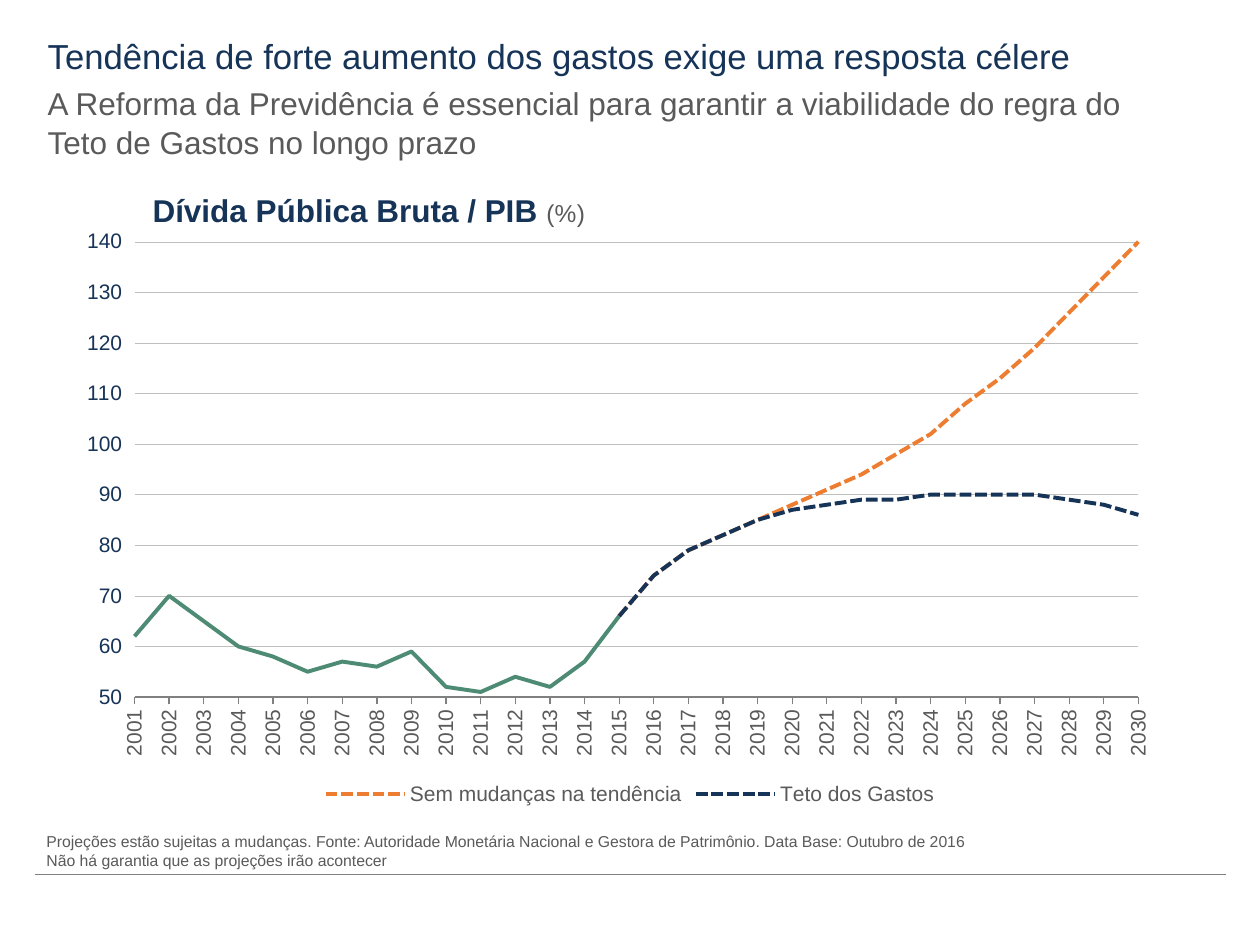
from lxml import etree
from pptx import Presentation
from pptx import util as u
from pptx.chart.data import CategoryChartData
from pptx.dml.color import RGBColor
from pptx.enum import chart as ch, dml, shapes, text
from pptx.oxml import parse_xml
from pptx.oxml.ns import nsdecls, qn

COLORS = {"navy": "163358", "gray": "5A5A5A", "rule": "808080", "grid": "BFBFBF",
          "green": "4D8B74", "orange": "ED7D31"}
FONT = "Arial"

YEARS = range(2001, 2031)
HISTORY = [62, 70, 65, 60, 58, 55, 57, 56, 59, 52, 51, 54, 52, 57, 66]
UNCHANGED = [66, 74, 79, 82, 85, 88, 91, 94, 98, 102, 108, 113, 119, 126, 133, 140]
CAPPED = [66, 74, 79, 82, 85, 87, 88, 89, 89, 90, 90, 90, 90, 89, 88, 86]


def rgb(name):
    return RGBColor.from_string(COLORS[name])


def place(parent, index, **fractions):
    """Give a chart part a manual layout, in fractions of the chart area."""
    for old in parent.findall(qn("c:layout")):
        parent.remove(old)
    layout = parse_xml(f"<c:layout {nsdecls('c')}><c:manualLayout/></c:layout>")
    manual = layout[0]
    if "w" in fractions:
        etree.SubElement(manual, qn("c:layoutTarget")).set("val", "inner")
    for axis in "xy":
        etree.SubElement(manual, qn(f"c:{axis}Mode")).set("val", "edge")
    for key, value in fractions.items():
        etree.SubElement(manual, qn(f"c:{key}")).set("val", str(value))
    parent.insert(index, layout)


class SlideBuilder:
    """Holds the deck's style and the slide being filled."""

    def __init__(self, deck):
        self.slide = deck.slides.add_slide(deck.slide_layouts[6])

    def style(self, font, size, color, bold=False):
        font.name, font.size, font.bold = FONT, u.Pt(size), bold
        font.color.rgb = rgb(color)

    def text(self, box, lines, size, color, spacing=None, wrap=True):
        frame = self.slide.shapes.add_textbox(*map(u.Inches, box)).text_frame
        frame.word_wrap = wrap
        frame.vertical_anchor = text.MSO_ANCHOR.TOP
        frame.text = "\n".join(lines)
        for paragraph in frame.paragraphs:
            paragraph.line_spacing = spacing
            for run in paragraph.runs:
                self.style(run.font, size, color)

    def rule(self, left, right, top):
        line = self.slide.shapes.add_connector(
            shapes.MSO_CONNECTOR.STRAIGHT, *map(u.Inches, (left, top, right, top)))
        line.line.color.rgb = rgb("rule")
        line.line.width = u.Pt(0.75)
        etree.SubElement(line.element.spPr, qn("a:effectLst"))

    def line_chart(self, box, categories, series):
        """Draw series given as (name, values, color, dash)."""
        data = CategoryChartData(number_format="0")
        data.categories = [str(category) for category in categories]
        for name, values, _, _ in series:
            data.add_series(name, values)
        chart = self.slide.shapes.add_chart(
            ch.XL_CHART_TYPE.LINE, *map(u.Inches, box), data).chart
        self.style(chart.font, 14, "gray")
        plot = chart.plots[0]
        plot.vary_by_categories = False
        for line, (_, _, color, dash) in zip(plot.series, series):
            line.smooth = False
            line.marker.style = ch.XL_MARKER_STYLE.NONE
            line.format.line.color.rgb = rgb(color)
            line.format.line.width = u.Pt(2.25)
            line.format.line.dash_style = dash
        place(chart.element.xpath(".//c:plotArea")[0], 0,
              x=0.047, y=0.105, w=0.918, h=0.717)
        return chart

    def chart_title(self, chart, parts, x, y):
        """Write the title from (text, size, color, bold) parts."""
        title = chart.chart_title
        paragraph = title.text_frame.paragraphs[0]
        for words, *look in parts:
            run = paragraph.add_run()
            run.text = words
            self.style(run.font, *look)
        place(title.element if hasattr(title, "element")
              else chart.element.xpath("./c:chart/c:title")[0], 1, x=x, y=y)

    def axes(self, chart, low, high, step):
        years, share = chart.category_axis, chart.value_axis
        years.tick_label_position = ch.XL_TICK_LABEL_POSITION.LOW
        years.major_tick_mark = ch.XL_TICK_MARK.OUTSIDE
        years.format.line.color.rgb = rgb("rule")
        self.style(years.tick_labels.font, 12, "gray")
        turned = chart.element.xpath(".//c:catAx/c:txPr/a:bodyPr")[0]
        turned.set("rot", "-5400000")
        turned.set("vert", "horz")

        share.minimum_scale, share.maximum_scale, share.major_unit = low, high, step
        share.major_tick_mark = ch.XL_TICK_MARK.OUTSIDE
        share.format.line.fill.background()
        share.major_gridlines.format.line.color.rgb = rgb("grid")
        share.major_gridlines.format.line.width = u.Pt(0.25)
        share.tick_labels.number_format = "0"
        share.tick_labels.number_format_is_linked = False
        self.style(share.tick_labels.font, 12, "navy")
        for crossing in chart.element.xpath(".//c:valAx/c:crossBetween"):
            crossing.getparent().remove(crossing)
        crossing = parse_xml(f'<c:crossBetween {nsdecls("c")} val="midCat"/>')
        chart.element.xpath(".//c:valAx/c:crosses")[0].addnext(crossing)

    def legend(self, chart, hidden):
        chart.has_legend = True
        chart.legend.position = ch.XL_LEGEND_POSITION.BOTTOM
        chart.legend.include_in_layout = False
        self.style(chart.legend.font, 12, "gray")
        entry = parse_xml(f'<c:legendEntry {nsdecls("c")}><c:idx val="{hidden}"/>'
                          '<c:delete val="1"/></c:legendEntry>')
        chart.element.xpath(".//c:legend/c:legendPos")[0].addnext(entry)


def main():
    deck = Presentation()
    deck.slide_width, deck.slide_height = u.Inches(10), u.Inches(7.5)
    page = SlideBuilder(deck)

    page.rule(0.28, 9.73, 6.94)
    page.text((0.28, 0.14, 8.72, 0.46),
              ["Tendência de forte aumento dos gastos exige uma resposta célere"],
              19.8, "navy", spacing=u.Pt(30))
    page.text((0.28, 0.6, 8.72, 0.39),
              ["A Reforma da Previdência é essencial para garantir a viabilidade "
               "do regra do Teto de Gastos no longo prazo"],
              18, "gray", spacing=1.05)
    page.text((0.27, 6.55, 7.61, 0.4),
              ["Projeções estão sujeitas a mudanças. Fonte: Autoridade Monetária Nacional "
               "e Gestora de Patrimônio. Data Base: Outubro de 2016",
               "Não há garantia que as projeções irão acontecer"],
              9, "gray", wrap=False)

    before_projection = [None] * (len(HISTORY) - 1)
    after_history = [None] * (len(YEARS) - len(HISTORY))
    dashed = dml.MSO_LINE.SQUARE_DOT
    debt = page.line_chart((0.66, 1.39, 8.68, 5.04), YEARS, [
        ("Dívida observada", HISTORY + after_history, "green", dml.MSO_LINE.SOLID),
        ("Sem mudanças na tendência", before_projection + UNCHANGED, "orange", dashed),
        ("Teto dos Gastos", before_projection + CAPPED, "navy", dashed),
    ])
    page.chart_title(debt, [("Dívida Pública Bruta / PIB ", 18, "navy", True),
                            ("(%)", 14, "gray", False)], x=0.06, y=0.02)
    page.axes(debt, 50, 140, 10)
    page.legend(debt, hidden=0)
    deck.save("out.pptx")


if __name__ == "__main__":
    main()
